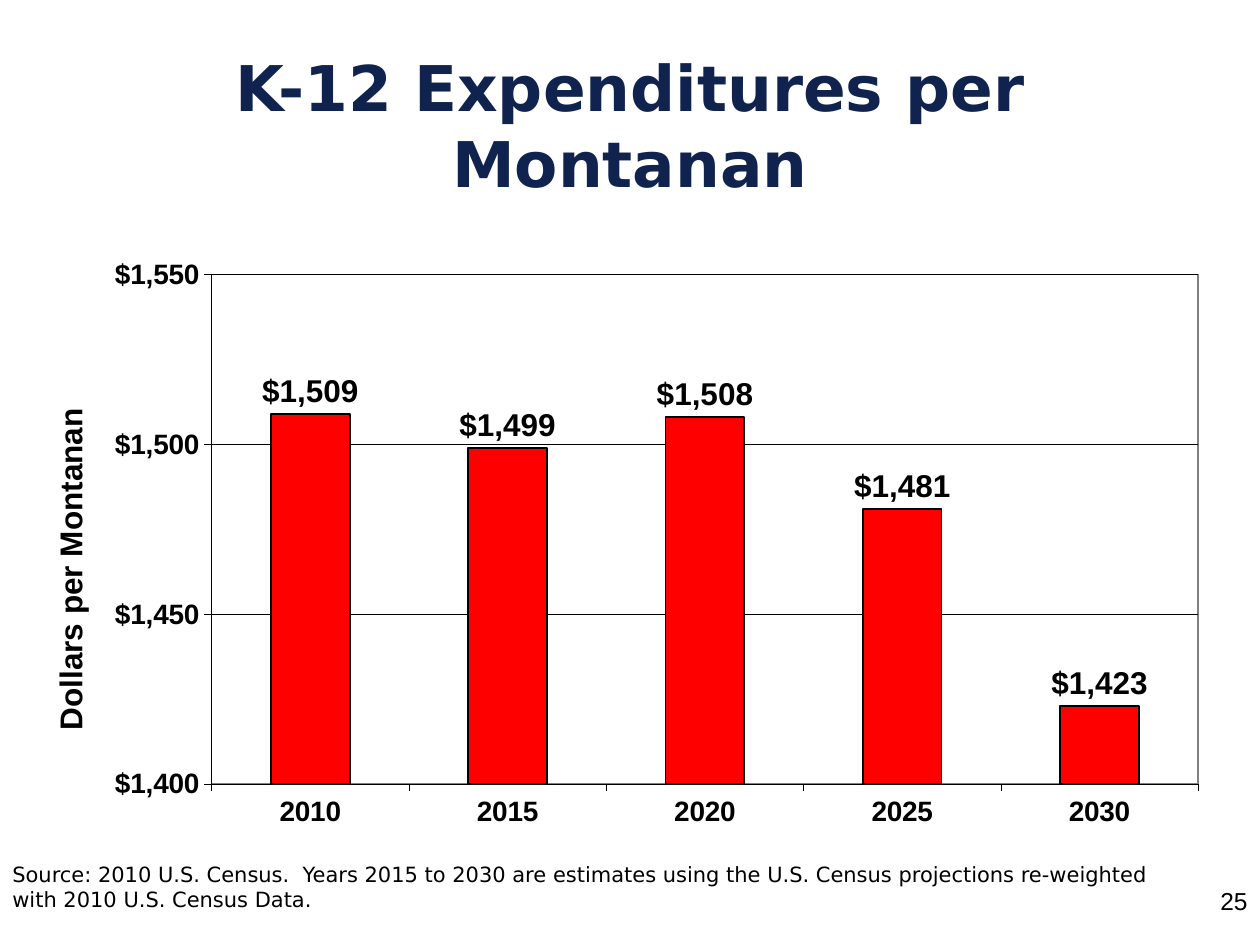
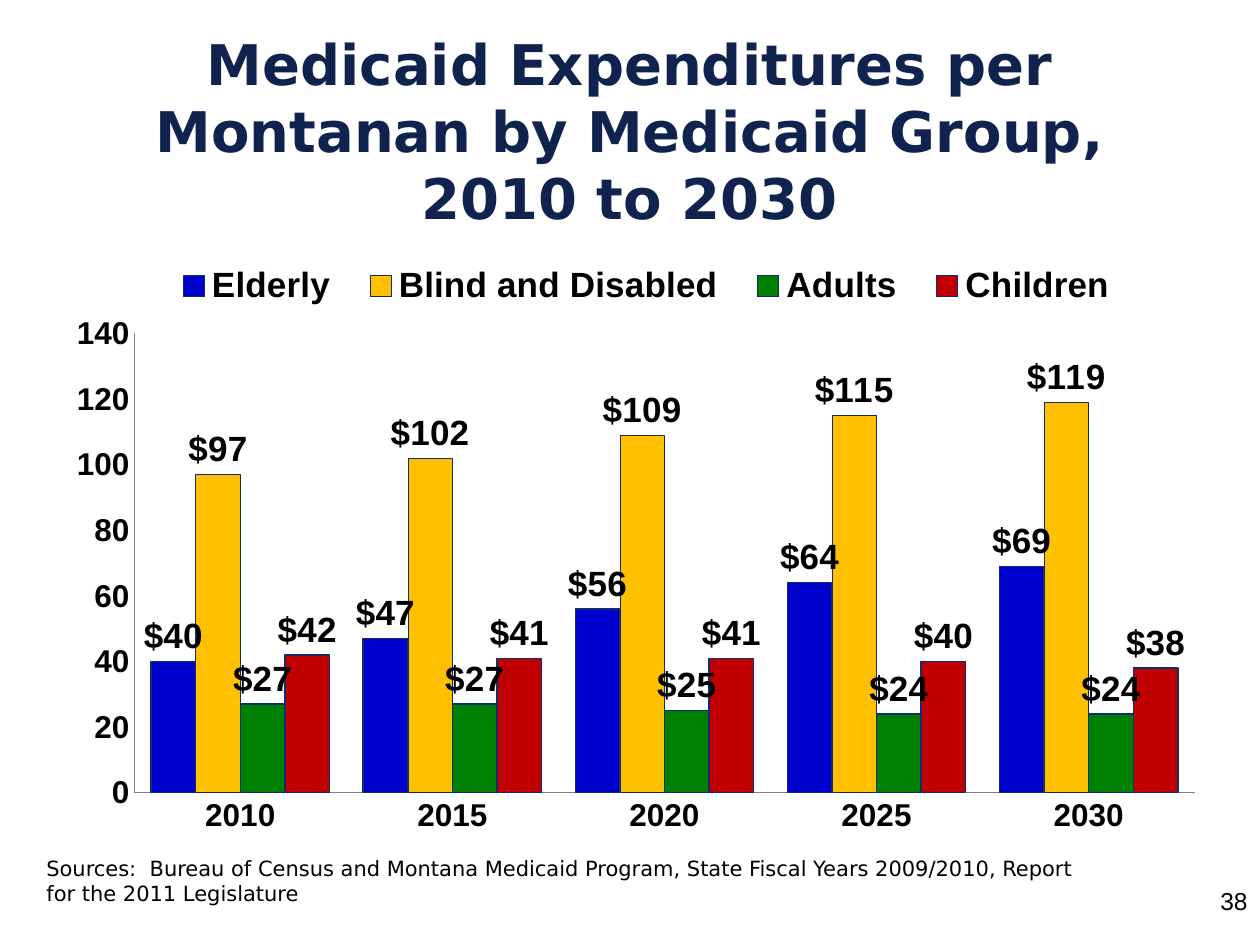
from lxml import etree
from pptx import Presentation, util as u
from pptx.chart.data import CategoryChartData
from pptx.dml.color import RGBColor
from pptx.enum import chart as ch, text as t
from pptx.oxml import parse_xml

W, H = 10, 7.5
COLOURS = {"title": "10224E", "text": "000000", "outline": "102E6C", "axis": "808080",
           "k12": "FF0000", "elderly": "0000CC", "disabled": "FFC000",
           "adults": "008000", "children": "C00000"}
RGB = {name: RGBColor.from_string(value) for name, value in COLOURS.items()}
HEADING, BODY = "DejaVu Sans", "Arial"
DOLLARS = '"$"#,##0'
YEARS = ["2010", "2015", "2020", "2025", "2030"]
NS = ('xmlns:c="http://schemas.openxmlformats.org/drawingml/2006/chart" '
      'xmlns:a="http://schemas.openxmlformats.org/drawingml/2006/main"')

SLIDES = [
    dict(title="K-12 Expenditures per Montanan", title_size=36,
         title_at=(0.5, 0.3, 9, 1.37), title_bottom=0.05, page="25",
         source=["Source: 2010 U.S. Census.  Years 2015 to 2030 are estimates using the "
                 "U.S. Census projections re-weighted with 2010 U.S. Census Data."],
         source_at=(0, 6.79, 9.5, 0.71),
         chart_at=(0, 1.79, 10, 5.21), plot_at=(0.168, 0.075, 0.783, 0.776),
         scale=(1400, 1550, 50), axis_format=DOLLARS, axis_size=16, label_size=18,
         axis_colour="text", tick=ch.XL_TICK_MARK.OUTSIDE, gap=150,
         axis_title="Dollars per Montanan", framed=True,
         series=[("Series 1", "k12", "text", 1, [1509, 1499, 1508, 1481, 1423])]),
    dict(title="Medicaid Expenditures per Montanan by Medicaid Group, 2010 to 2030",
         title_size=32, title_at=(0.5, 0.66, 9, 1.25), title_bottom=0.55, page="38",
         source=["Sources:  Bureau of Census and Montana Medicaid Program, "
                 "State Fiscal Years 2009/2010, Report ", "for the 2011 Legislature"],
         source_at=(0.27, 6.74, 9, 0.5),
         chart_at=(0.17, 1.76, 9.63, 5.07), plot_at=(0.093, 0.175, 0.874, 0.719),
         scale=(0, 140, 20), axis_format="0", axis_size=18, label_size=20,
         axis_colour="axis", tick=ch.XL_TICK_MARK.NONE, gap=75,
         axis_title=None, framed=False,
         series=[("Elderly", "elderly", "outline", 0.75, [40, 47, 56, 64, 69]),
                 ("Blind and Disabled", "disabled", "outline", 0.25, [97, 102, 109, 115, 119]),
                 ("Adults", "adults", "outline", 0.75, [27, 27, 25, 24, 24]),
                 ("Children", "children", "outline", 0.75, [42, 41, 41, 40, 38])]),
]


def write(slide, at, lines, size, face, colour="text", bold=False,
          align=t.PP_ALIGN.LEFT, anchor=t.MSO_ANCHOR.TOP, bottom=0.05):
    frame = slide.shapes.add_textbox(*map(u.Inches, at)).text_frame
    frame.word_wrap = True
    frame.vertical_anchor = anchor
    frame.margin_bottom = u.Inches(bottom)
    paragraph = frame.paragraphs[0]
    paragraph.alignment = align
    for number, line in enumerate(lines):
        if number:
            paragraph.add_line_break()
        run = paragraph.add_run()
        run.text = line
        run.font.size, run.font.name, run.font.bold = u.Pt(size), face, bold
        run.font.color.rgb = RGB[colour]


def place(element, index, shares, inner=False):
    """Set a manual layout, in shares of the chart's size, on a chart part."""
    for old in element.findall("{*}layout"):
        element.remove(old)
    layout = parse_xml(f"<c:layout {NS}><c:manualLayout/></c:layout>")
    settings = [("layoutTarget", "inner")] if inner else []
    settings += [("xMode", "edge"), ("yMode", "edge")] + list(zip("xywh", shares))
    for tag, value in settings:
        child = etree.SubElement(layout[0], etree.QName(layout).namespace.join("{}") + tag)
        child.set("val", str(value))
    element.insert(index, layout)


deck = Presentation()
deck.slide_width, deck.slide_height = u.Inches(W), u.Inches(H)

for content in SLIDES:
    slide = deck.slides.add_slide(deck.slide_layouts[6])

    # Title and page number
    write(slide, content["title_at"], [content["title"]], content["title_size"], HEADING,
          "title", True, t.PP_ALIGN.CENTER, t.MSO_ANCHOR.MIDDLE, content["title_bottom"])
    write(slide, (W - 0.48, H - 0.52, 0.48, 0.52), [content["page"]], 14, BODY,
          align=t.PP_ALIGN.RIGHT)

    # Expenditure columns
    data = CategoryChartData()
    data.categories = YEARS
    for name, _, _, _, dollars in content["series"]:
        data.add_series(name, dollars)
    chart = slide.shapes.add_chart(ch.XL_CHART_TYPE.COLUMN_CLUSTERED,
                                   *map(u.Inches, content["chart_at"]), data).chart
    chart.has_title = False
    chart.font.name, chart.font.size = BODY, u.Pt(10)
    chart.font.color.rgb = RGB["text"]
    columns = chart.plots[0]
    columns.vary_by_categories = False
    columns.gap_width, columns.overlap = content["gap"], 0
    for group, (_, fill, outline, width, _) in zip(columns.series, content["series"]):
        group.format.fill.solid()
        group.format.fill.fore_color.rgb = RGB[fill]
        group.format.line.color.rgb = RGB[outline]
        group.format.line.width = u.Pt(width)
        labels = group.data_labels
        labels.show_value = True
        labels.number_format, labels.number_format_is_linked = DOLLARS, False
        labels.position = ch.XL_LABEL_POSITION.OUTSIDE_END
        labels.font.size, labels.font.bold = u.Pt(content["label_size"]), True
        labels.font.name, labels.font.color.rgb = BODY, RGB["text"]

    # Axes
    years, amounts = chart.category_axis, chart.value_axis
    for axis in (years, amounts):
        axis.major_tick_mark, axis.minor_tick_mark = content["tick"], ch.XL_TICK_MARK.NONE
        axis.format.line.color.rgb = RGB[content["axis_colour"]]
        axis.format.line.width = u.Pt(0.25)
        font = axis.tick_labels.font
        font.size, font.bold, font.name = u.Pt(content["axis_size"]), True, BODY
        font.color.rgb = RGB["text"]
    amounts.minimum_scale, amounts.maximum_scale, amounts.major_unit = content["scale"]
    amounts.tick_labels.number_format = content["axis_format"]
    amounts.tick_labels.number_format_is_linked = False
    amounts.has_major_gridlines = content["framed"]

    # Plot area, with its frame and gridlines where shown
    plot_area = chart.element.find(".//{*}plotArea")
    place(plot_area, 0, content["plot_at"], inner=True)
    if content["framed"]:
        grid = amounts.major_gridlines.format.line
        grid.color.rgb, grid.width = RGB["text"], u.Pt(0.25)
        plot_area.append(parse_xml(
            f'<c:spPr {NS}><a:noFill/><a:ln w="9525"><a:solidFill>'
            f'<a:srgbClr val="{COLOURS["axis"]}"/></a:solidFill></a:ln></c:spPr>'))

    # Axis title
    if content["axis_title"]:
        caption = amounts.axis_title.text_frame.paragraphs[0].add_run()
        caption.text = content["axis_title"]
        caption.font.size, caption.font.bold, caption.font.name = u.Pt(18), True, BODY
        caption.font.color.rgb = RGB["text"]
        place(amounts.axis_title._element, 1, (0.035, 0.27))

    # Legend of groups
    chart.has_legend = len(content["series"]) > 1
    if chart.has_legend:
        legend = chart.legend
        legend.position = ch.XL_LEGEND_POSITION.BOTTOM
        legend.include_in_layout = False
        legend.font.size, legend.font.bold, legend.font.name = u.Pt(20), True, BODY
        legend.font.color.rgb = RGB["text"]
        place(legend._element, 1, (0.11, 0.05, 0.81, 0.1))

    # Source note
    write(slide, content["source_at"], content["source"], 12, HEADING)

deck.save("out.pptx")
